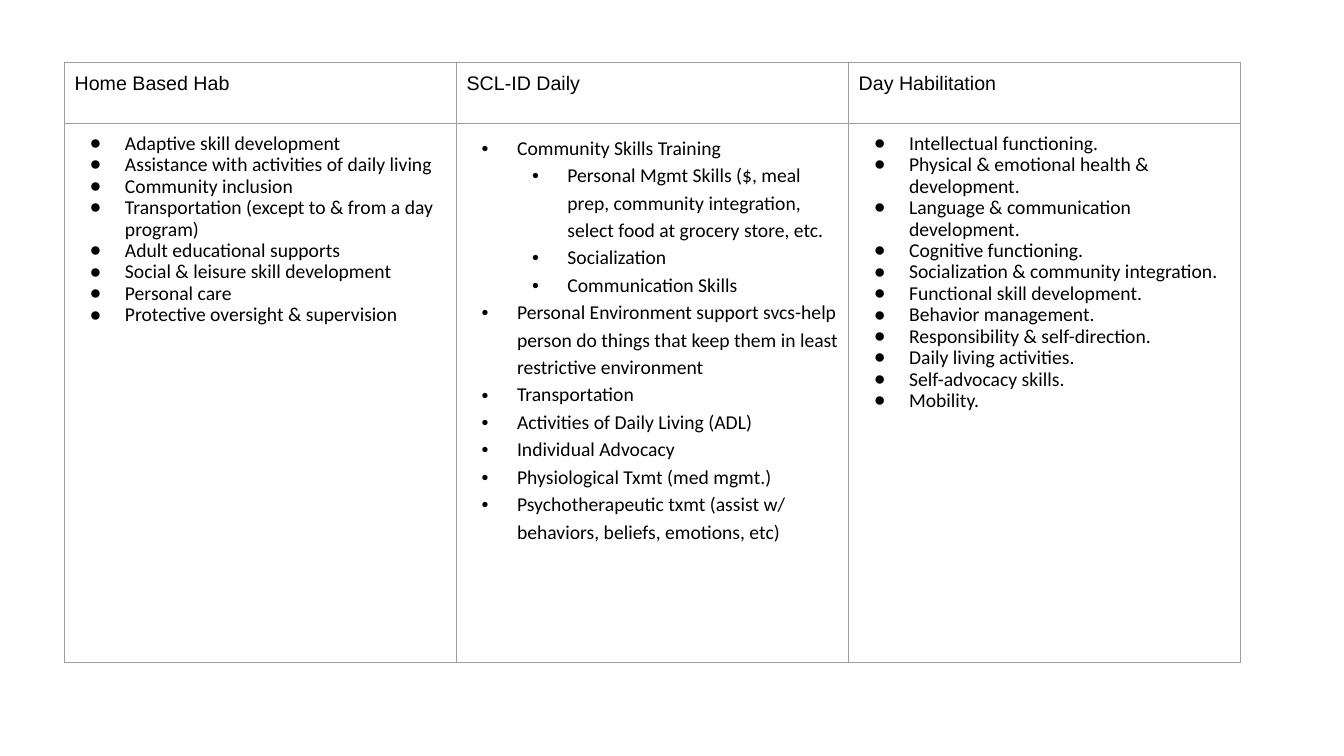
from pptx import Presentation
from pptx.dml.color import RGBColor
from pptx.oxml.ns import qn
from pptx.util import Cm, Pt
from lxml.etree import SubElement

BLACK = RGBColor(0x00, 0x00, 0x00)
BORDER_GREY = RGBColor(0x9E, 0x9E, 0x9E)
INSET = Cm(0.25)
BULLET_INDENT = Cm(1.27)
BULLET_HANGING = Cm(0.89)

# Each service: heading, bullet, line spacing, items as (level, text)
SERVICES = [
    ("Home Based Hab", "●", 0.9, [
        (0, "Adaptive skill development"),
        (0, "Assistance with activities of daily living"),
        (0, "Community inclusion"),
        (0, "Transportation (except to & from a day program)"),
        (0, "Adult educational supports"),
        (0, "Social & leisure skill development"),
        (0, "Personal care"),
        (0, "Protective oversight & supervision"),
    ]),
    ("SCL-ID Daily", "•", 1.15, [
        (0, "Community Skills Training"),
        (1, "Personal Mgmt Skills ($, meal prep, community integration, "
            "select food at grocery store, etc."),
        (1, "Socialization"),
        (1, "Communication Skills"),
        (0, "Personal Environment support svcs-help person do things "
            "that keep them in least restrictive environment"),
        (0, "Transportation"),
        (0, "Activities of Daily Living (ADL)"),
        (0, "Individual Advocacy"),
        (0, "Physiological Txmt (med mgmt.)"),
        (0, "Psychotherapeutic txmt (assist w/ behaviors, beliefs, emotions, etc)"),
    ]),
    ("Day Habilitation", "●", 0.9, [
        (0, "Intellectual functioning."),
        (0, "Physical & emotional health & development."),
        (0, "Language & communication development."),
        (0, "Cognitive functioning."),
        (0, "Socialization & community integration."),
        (0, "Functional skill development."),
        (0, "Behavior management."),
        (0, "Responsibility & self-direction."),
        (0, "Daily living activities."),
        (0, "Self-advocacy skills."),
        (0, "Mobility."),
    ]),
]


def add_text(paragraph, text, font_name):
    run = paragraph.add_run()
    run.text = text
    run.font.name = font_name
    run.font.size = Pt(14)
    run.font.color.rgb = BLACK


def add_bullet(paragraph, character, level):
    properties = paragraph._p.get_or_add_pPr()
    properties.set("marL", str(BULLET_INDENT * (level + 1)))
    properties.set("indent", str(-BULLET_HANGING))
    color = SubElement(properties, qn("a:buClr"))
    SubElement(color, qn("a:srgbClr"), val=str(BLACK))
    SubElement(properties, qn("a:buFont"), typeface="Arial")
    SubElement(properties, qn("a:buChar"), char=character)


presentation = Presentation()
presentation.slide_width = Cm(33.87)
presentation.slide_height = Cm(19.05)
slide = presentation.slides.add_slide(presentation.slide_layouts[6])

table = slide.shapes.add_table(
    2, len(SERVICES), Cm(1.63), Cm(1.58), Cm(29.64), Cm(15.11)).table
table.first_row = False
table.horz_banding = False
table.rows[0].height = Cm(1.52)
table.rows[1].height = Cm(13.59)
for column in table.columns:
    column.width = Cm(9.88)

for cell in table.iter_cells():
    cell.margin_left = cell.margin_right = INSET
    cell.margin_top = cell.margin_bottom = INSET
    for side in ("lnL", "lnR", "lnT", "lnB"):
        border = SubElement(cell._tc.get_or_add_tcPr(), qn(f"a:{side}"), w=str(Pt(0.75)))
        border_fill = SubElement(border, qn("a:solidFill"))
        SubElement(border_fill, qn("a:srgbClr"), val=str(BORDER_GREY))
    cell.fill.background()

for column_index, (heading, bullet, spacing, items) in enumerate(SERVICES):
    add_text(table.cell(0, column_index).text_frame.paragraphs[0], heading, "Arial")
    text_frame = table.cell(1, column_index).text_frame
    for item_index, (level, text) in enumerate(items):
        paragraph = text_frame.add_paragraph() if item_index else text_frame.paragraphs[0]
        paragraph.level = level
        paragraph.line_spacing = spacing
        add_bullet(paragraph, bullet, level)
        add_text(paragraph, text, "Calibri")

presentation.save("out.pptx")
